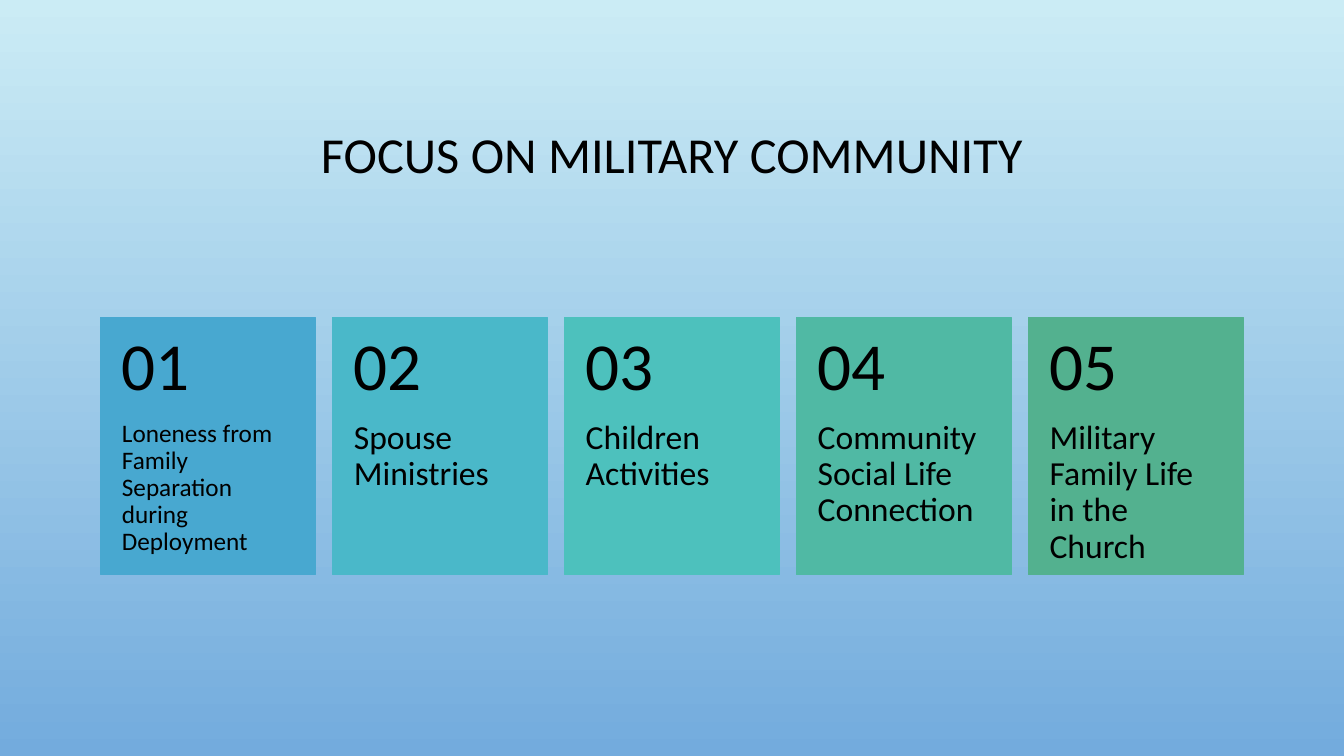
from dataclasses import dataclass

from pptx import Presentation
from pptx.dml.color import RGBColor
from pptx.enum.shapes import MSO_SHAPE
from pptx.enum.text import MSO_ANCHOR, PP_ALIGN
from pptx.shapes.autoshape import Shape
from pptx.slide import Slide
from pptx.util import Inches, Pt


@dataclass(frozen=True)
class Theme:
    font: str = "Calibri"
    ink: str = "000000"
    sky: tuple[str, str] = ("CBECF5", "73ABDD")
    title: int = 36
    number: int = 48
    label: int = 24
    small: int = 18


@dataclass(frozen=True)
class Grid:
    left: float = 1.0
    top: float = 3.15
    pitch: float = 2.3
    width: float = 2.13
    head: float = 1.02
    body: float = 1.53

    def column(self, index: int) -> float:
        return self.left + index * self.pitch


@dataclass(frozen=True)
class Card:
    text: str
    fill: str
    size: int


THEME = Theme()
GRID = Grid()
CARDS = [
    Card("Loneness from Family Separation during Deployment", "48A8D0", THEME.small),
    Card("Spouse Ministries", "4AB8C9", THEME.label),
    Card("Children Activities", "4DC1BD", THEME.label),
    Card("Community Social Life Connection", "50B9A4", THEME.label),
    Card("Military Family Life in the Church", "53B18F", THEME.label),
]


def color(code: str) -> RGBColor:
    return RGBColor.from_string(code)


def place(shape: Shape, left: float, top: float, width: float, height: float) -> None:
    shape.left, shape.top = Inches(left), Inches(top)
    shape.width, shape.height = Inches(width), Inches(height)


def write(
    shape: Shape,
    text: str,
    *,
    size: int,
    align: PP_ALIGN = PP_ALIGN.LEFT,
    anchor: MSO_ANCHOR = MSO_ANCHOR.TOP,
    inset: tuple[float, float, float, float] = (0.1, 0.05, 0.1, 0.05),
) -> None:
    frame = shape.text_frame
    frame.text = text
    frame.word_wrap = True
    frame.vertical_anchor = anchor
    frame.margin_left, frame.margin_top, frame.margin_right, frame.margin_bottom = map(
        Inches, inset
    )
    line = frame.paragraphs[0]
    line.alignment = align
    line.line_spacing = 0.9
    font = line.runs[0].font
    font.name, font.size = THEME.font, Pt(size)
    font.color.rgb = color(THEME.ink)


def paint(slide: Slide) -> None:
    fill = slide.background.fill
    fill.gradient()
    fill.gradient_angle = 270
    for stop, code in zip(fill.gradient_stops, THEME.sky):
        stop.color.rgb = color(code)


def draw(slide: Slide, index: int, card: Card) -> None:
    left = GRID.column(index)
    middle = GRID.top + GRID.head

    tile = slide.shapes.add_shape(MSO_SHAPE.RECTANGLE, 0, 0, 0, 0)
    place(tile, left, GRID.top, GRID.width, GRID.head + GRID.body)
    tile.shadow.inherit = False
    tile.fill.solid()
    tile.fill.fore_color.rgb = color(card.fill)
    tile.line.color.rgb = color(card.fill)
    tile.line.width = Pt(0.75)

    label = slide.shapes.add_textbox(0, 0, 0, 0)
    place(label, left, middle, GRID.width, GRID.body)
    write(label, card.text, size=card.size, inset=(0.21, 0, 0.21, 0.36))

    number = slide.shapes.add_textbox(0, 0, 0, 0)
    place(number, left, GRID.top, GRID.width, GRID.head)
    write(
        number,
        f"{index + 1:02}",
        size=THEME.number,
        anchor=MSO_ANCHOR.MIDDLE,
        inset=(0.21, 0.18, 0.21, 0.18),
    )


def main() -> None:
    deck = Presentation()
    deck.slide_width, deck.slide_height = Inches(13.33), Inches(7.5)
    slide = deck.slides.add_slide(deck.slide_layouts[5])
    paint(slide)

    title = slide.shapes.title
    place(title, 1, 0.68, 11.33, 1.75)
    write(
        title,
        "FOCUS ON MILITARY COMMUNITY",
        size=THEME.title,
        align=PP_ALIGN.CENTER,
        anchor=MSO_ANCHOR.MIDDLE,
    )

    for index, card in enumerate(CARDS):
        draw(slide, index, card)
    deck.save("out.pptx")


if __name__ == "__main__":
    main()
